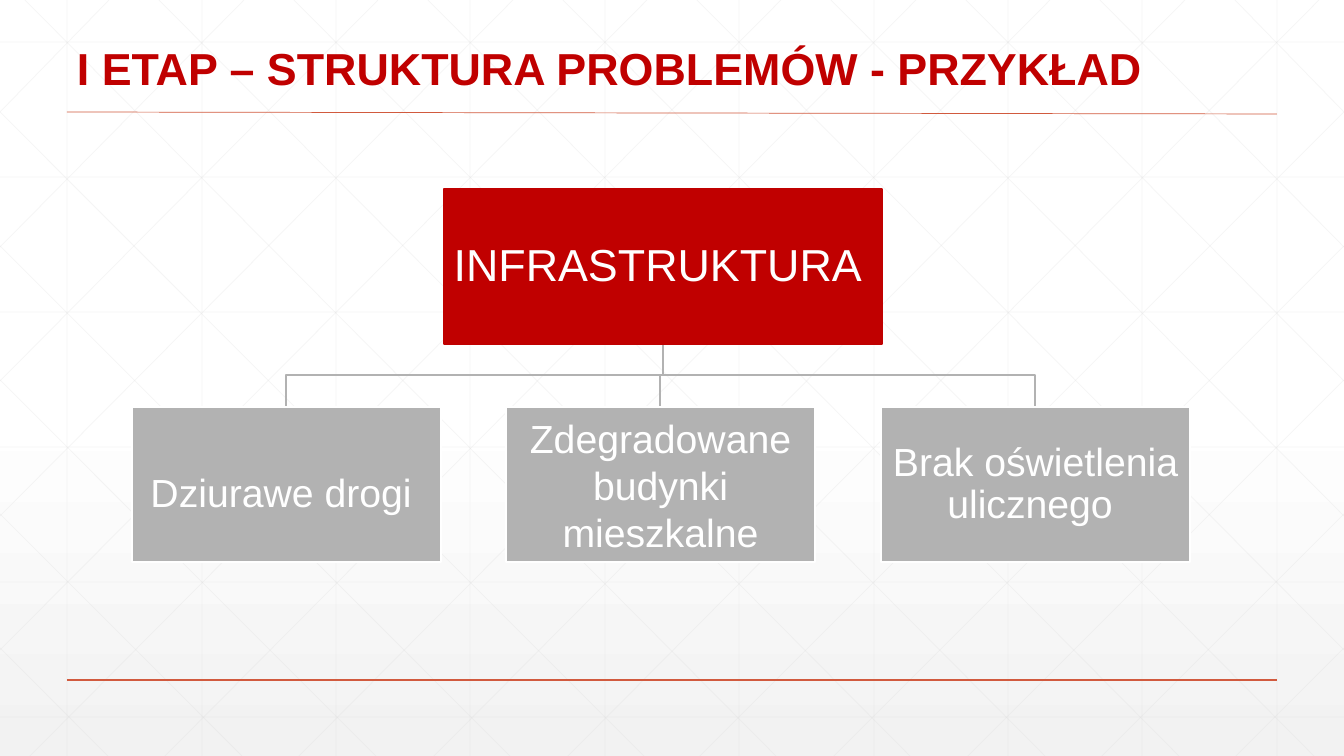
from dataclasses import dataclass

from lxml.etree import SubElement
from pptx import Presentation
from pptx.dml.color import RGBColor
from pptx.enum.shapes import MSO_CONNECTOR, MSO_SHAPE
from pptx.enum.text import MSO_ANCHOR, PP_ALIGN
from pptx.oxml.ns import qn
from pptx.util import Pt

PX = 914400 / 100.8
WIDE, HIGH = 1344, 756


@dataclass(frozen=True)
class Theme:
    font: str = "Arial"
    red: str = "C00000"
    rule: str = "D15A3E"
    grey: str = "B2B2B2"
    grid: str = "D9D9D9"
    white: str = "FFFFFF"
    shade: str = "F2F2F2"
    head: int = 32
    body: int = 28


THEME = Theme()


def emu(px):
    return round(px * PX)


def rgb(tone):
    return RGBColor.from_string(tone)


def apply(item, **values):
    for name, value in values.items():
        setattr(item, name, value)


def write(shape, text, size, tone, align, anchor, space, pad, top=None):
    frame = shape.text_frame
    apply(frame, text=text, word_wrap=True, vertical_anchor=anchor,
          margin_left=emu(pad), margin_right=emu(pad),
          margin_top=emu(pad if top is None else top), margin_bottom=emu(pad))
    for para in frame.paragraphs:
        apply(para, alignment=align, line_spacing=space)
        apply(para.font, name=THEME.font, size=Pt(size))
        para.font.color.rgb = rgb(tone)
    return frame


def add_line(slide, start, end, tone, width, alpha=None):
    line = slide.shapes.add_connector(
        MSO_CONNECTOR.STRAIGHT, *map(emu, (*start, *end)))
    line.line.color.rgb = rgb(tone)
    line.line.width = Pt(width)
    props = line._element.spPr
    SubElement(props, qn("a:effectLst"))
    if alpha:
        color = props.find(".//" + qn("a:srgbClr"))
        SubElement(color, qn("a:alpha"), val=str(alpha * 1000))


def add_grid(slide):
    lines = [((x, 0), (x, HIGH))
             for x in (round(67.2 + 134.4 * i) for i in range(10))]
    lines += [((0, y), (WIDE, y)) for y in range(42, HIGH, 135)]
    slants = [((x, 0), (min(WIDE, x + 751), min(HIGH, WIDE + 3 - x)))
              for x in (round(25 + 134.4 * i) for i in range(10))]
    slants += [((0, y), (HIGH - y, HIGH)) for y in range(112, HIGH, 134)][:5]
    lines += slants
    lines += [((WIDE - a, b), (WIDE - c, d)) for (a, b), (c, d) in slants]
    for start, end in lines:
        add_line(slide, start, end, THEME.grid, 0.5, 25)


def add_title(slide, text):
    box = slide.shapes.add_textbox(*map(emu, (67, -21, 1158, 126)))
    frame = write(box, text, THEME.head, THEME.red, PP_ALIGN.LEFT,
                  MSO_ANCHOR.BOTTOM, 0.9, 10, 5)
    frame.paragraphs[0].font.bold = True


def add_box(slide, place, text, size, fill, edge, space=0.9, top=2):
    box = slide.shapes.add_shape(MSO_SHAPE.RECTANGLE, *map(emu, place))
    box.shadow.inherit = False
    box.fill.solid()
    box.fill.fore_color.rgb = rgb(fill)
    box.line.color.rgb = rgb(edge)
    box.line.width = Pt(1)
    write(box, text, size, THEME.white, PP_ALIGN.CENTER,
          MSO_ANCHOR.MIDDLE, space, 2, top)


def add_branch(slide, start, end, bend):
    pen = slide.shapes.build_freeform(*start, scale=PX)
    pen.add_line_segments(
        [(start[0], bend), (end[0], bend), end], close=False)
    branch = pen.convert_to_shape()
    branch.shadow.inherit = False
    branch.fill.background()
    branch.line.color.rgb = rgb(THEME.grey)
    branch.line.width = Pt(1)


def add_tree(slide, root, leaves):
    left, top, width, height = 444, 189, 438, 155
    row, span = 407, 309
    spots = [132 + 749 * i // 2 for i in range(len(leaves))]
    for x in reversed(spots):
        add_branch(slide, (left + width // 2, top + height),
                   (x + span // 2, row), 375)
    add_box(slide, (left, top, width, height), root,
            THEME.head, THEME.red, THEME.red)
    for x, (text, space, inset) in zip(spots, leaves):
        add_box(slide, (x, row, span, height), text, THEME.body,
                THEME.grey, THEME.white, space, inset)


def paint(slide):
    fill = slide.background.fill
    fill.gradient()
    fill.gradient_angle = 270
    stops = ((0.53, THEME.white), (1, THEME.shade))
    for stop, (place, tone) in zip(fill.gradient_stops, stops):
        stop.position = place
        stop.color.rgb = rgb(tone)


def main():
    deck = Presentation()
    apply(deck, slide_width=emu(WIDE), slide_height=emu(HIGH))
    slide = deck.slides.add_slide(deck.slide_layouts[6])
    paint(slide)
    add_grid(slide)
    add_line(slide, (67, 680), (1277, 680), THEME.rule, 1)
    add_line(slide, (67, 112), (1277, 114), THEME.rule, 0.5)
    add_title(slide, "I ETAP – STRUKTURA PROBLEMÓW - PRZYKŁAD")
    add_tree(slide, "INFRASTRUKTURA ", [
        ("Dziurawe drogi ", 0.9, 22),
        ("Zdegradowane\nbudynki mieszkalne", 1.0, 2),
        ("Brak oświetlenia ulicznego ", 0.9, 2),
    ])
    deck.save("out.pptx")


if __name__ == "__main__":
    main()
